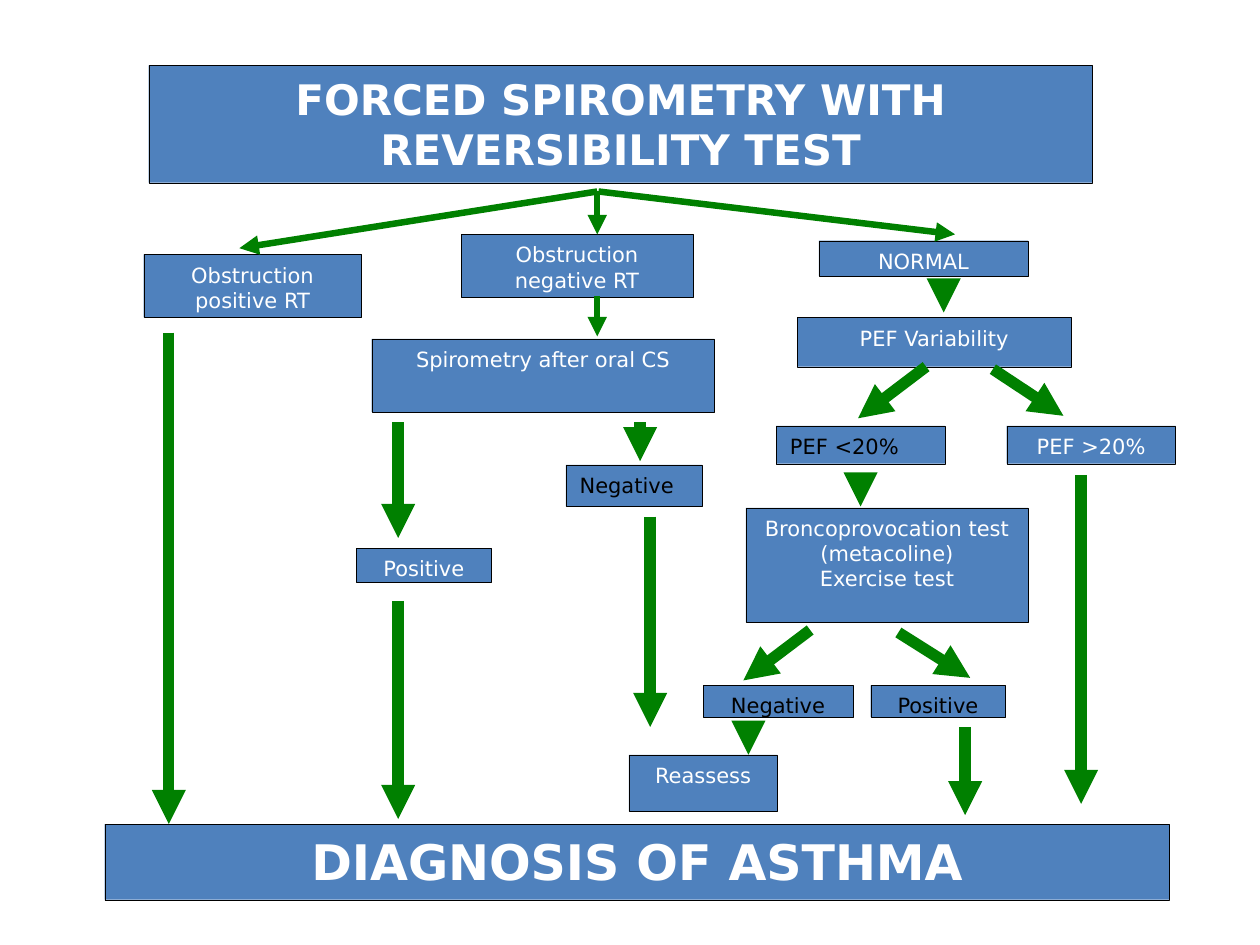
import pptx
import pptx.dml.color
import pptx.enum.shapes
import pptx.enum.text
import pptx.oxml.ns
import pptx.util
from lxml import etree

Inches = pptx.util.Inches
Pt = pptx.util.Pt
ALIGN = pptx.enum.text.PP_ALIGN

COLORS = {"box": "4F81BD", "edge": "000000", "arrow": "008000",
          "light": "FFFFFF", "dark": "000000"}
FRAME_FORMAT = {
    "word_wrap": True,
    "vertical_anchor": pptx.enum.text.MSO_ANCHOR.TOP,
    "margin_left": Inches(0.11),
    "margin_right": Inches(0.11),
    "margin_top": Inches(0.06),
    "margin_bottom": Inches(0.06),
}
STEP_FORMAT = {"name": "DejaVu Sans", "size": Pt(12), "bold": False}
TITLE_FORMAT = {**STEP_FORMAT, "size": Pt(24), "bold": True}
DIAGNOSIS_FORMAT = {**TITLE_FORMAT, "size": Pt(28)}
THIN, THICK = 3.71, 6.5

WHITE_STEPS = [
    ("Obstruction positive RT", 1.14, 2.02, 1.73, 0.5),
    ("Obstruction negative RT", 3.66, 1.86, 1.84, 0.5),
    ("NORMAL", 6.5, 1.91, 1.66, 0.28),
    ("Spirometry after oral CS", 2.95, 2.69, 2.72, 0.58),
    ("Positive", 2.83, 4.35, 1.07, 0.27),
    ("PEF Variability", 6.33, 2.52, 2.17, 0.39),
    ("PEF >20%", 7.99, 3.38, 1.34, 0.3),
    ("Broncoprovocation test\n(metacoline)\nExercise test", 5.92, 4.03, 2.24, 0.91),
    ("Reassess", 4.99, 5.99, 1.18, 0.45),
]
BLACK_STEPS = [
    ("PEF <20%", 6.16, 3.38, 1.34, 0.3, ALIGN.LEFT),
    ("Negative", 4.49, 3.69, 1.08, 0.33, ALIGN.LEFT),
    ("Negative", 5.58, 5.44, 1.19, 0.25, ALIGN.CENTER),
    ("Positive", 6.91, 5.44, 1.07, 0.25, ALIGN.CENTER),
]
THIN_ARROWS = [
    (4.74, 1.52, 1.9, 1.97),
    (4.74, 1.52, 4.74, 1.86),
    (4.75, 1.52, 7.58, 1.86),
    (4.74, 2.35, 4.74, 2.67),
]
DOWN_ARROWS = [
    (1.34, 2.64, 6.54),
    (3.16, 3.35, 4.27),
    (3.16, 4.77, 6.5),
    (5.08, 3.35, 3.66),
    (5.16, 4.1, 5.77),
    (7.49, 2.27, 2.48),
    (6.83, 3.81, 4.02),
    (5.94, 5.8, 5.99),
    (7.66, 5.77, 6.47),
    (8.58, 3.77, 6.38),
]
BRANCH_ARROWS = [
    (7.35, 2.91, 6.81, 3.32),
    (7.88, 2.93, 8.44, 3.3),
    (6.43, 5, 5.9, 5.4),
    (7.13, 5.02, 7.7, 5.38),
]


def color(name):
    return pptx.dml.color.RGBColor.from_string(COLORS[name])


def apply_format(target, values):
    for attribute, value in values.items():
        setattr(target, attribute, value)


def add_box(slide, text, left, top, width, height, align=ALIGN.CENTER,
            ink="light", font_format=STEP_FORMAT):
    box = slide.shapes.add_shape(
        pptx.enum.shapes.MSO_SHAPE.RECTANGLE,
        Inches(left), Inches(top), Inches(width), Inches(height))
    box.shadow.inherit = False
    box.fill.solid()
    box.fill.fore_color.rgb = color("box")
    box.line.color.rgb = color("edge")
    box.line.width = Pt(0.05)
    apply_format(box.text_frame, FRAME_FORMAT)
    box.text_frame.text = text
    for paragraph in box.text_frame.paragraphs:
        paragraph.alignment = align
        apply_format(paragraph.font, font_format)
        paragraph.font.color.rgb = color(ink)


def add_arrow(slide, start_x, start_y, end_x, end_y, weight=THICK):
    arrow = slide.shapes.add_connector(
        pptx.enum.shapes.MSO_CONNECTOR.STRAIGHT,
        Inches(start_x), Inches(start_y), Inches(end_x), Inches(end_y))
    arrow.line.color.rgb = color("arrow")
    arrow.line.width = Pt(weight)
    qn = pptx.oxml.ns.qn
    properties = arrow._element.spPr
    etree.SubElement(properties.find(qn("a:ln")), qn("a:tailEnd"), type="triangle")
    etree.SubElement(properties, qn("a:effectLst"))


def main():
    deck = pptx.Presentation()
    deck.slide_width, deck.slide_height = Inches(10), Inches(7.5)
    slide = deck.slides.add_slide(deck.slide_layouts[6])

    add_box(slide, "FORCED SPIROMETRY WITH REVERSIBILITY TEST",
            1.18, 0.52, 7.49, 0.93, font_format=TITLE_FORMAT)
    add_box(slide, "DIAGNOSIS OF ASTHMA",
            0.83, 6.54, 8.45, 0.6, font_format=DIAGNOSIS_FORMAT)
    for step in WHITE_STEPS:
        add_box(slide, *step)
    for step in BLACK_STEPS:
        add_box(slide, *step, ink="dark")

    for route in THIN_ARROWS:
        add_arrow(slide, *route, weight=THIN)
    for x, top, bottom in DOWN_ARROWS:
        add_arrow(slide, x, top, x, bottom)
    for route in BRANCH_ARROWS:
        add_arrow(slide, *route)

    deck.save("out.pptx")


if __name__ == "__main__":
    main()
